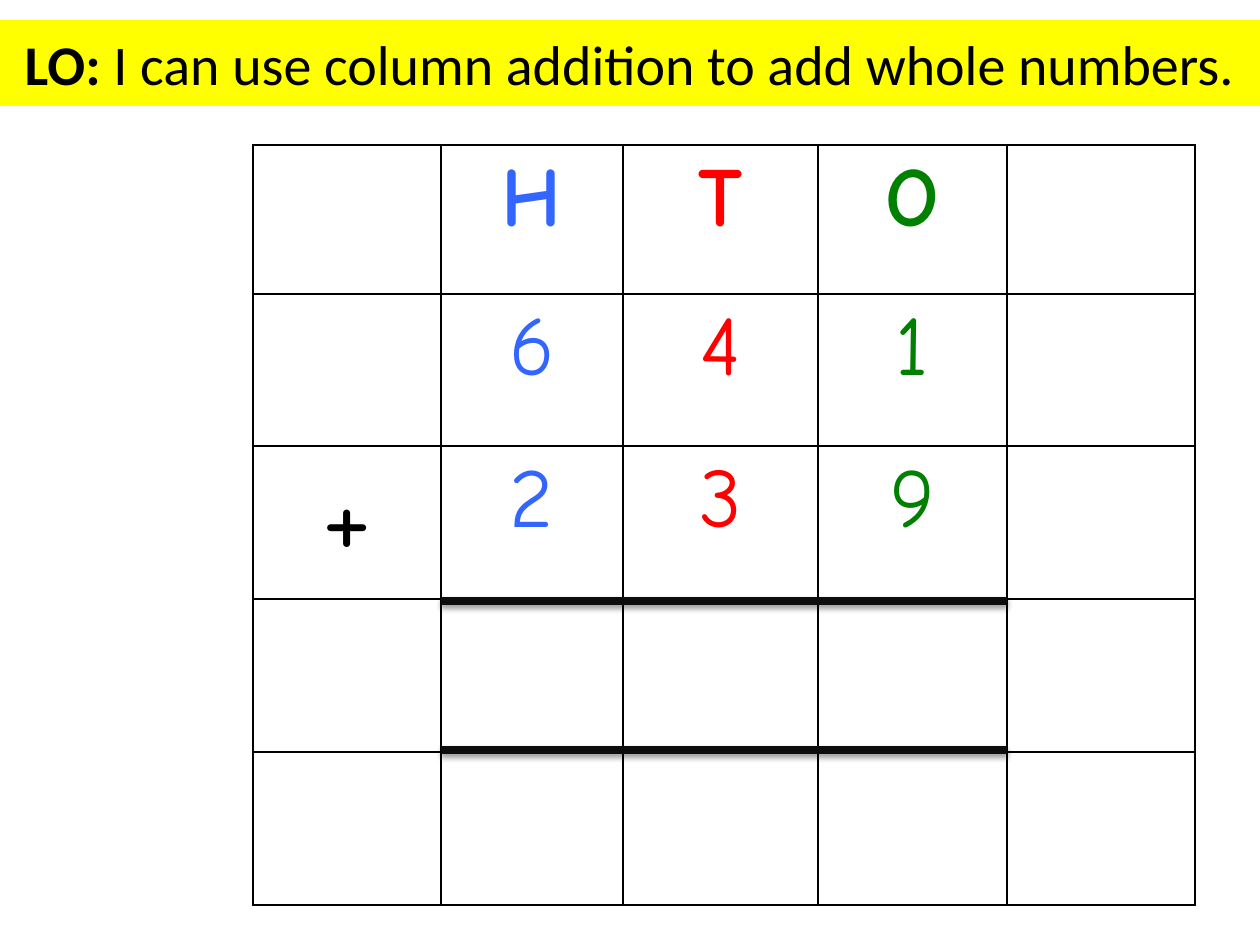
from lxml import etree
from pptx import Presentation
from pptx.dml.color import RGBColor
from pptx.enum.shapes import MSO_CONNECTOR
from pptx.enum.text import MSO_ANCHOR, MSO_AUTO_SIZE, PP_ALIGN
from pptx.oxml import parse_xml
from pptx.util import Emu, Pt

LINE = MSO_CONNECTOR.STRAIGHT
MIDDLE = MSO_ANCHOR.MIDDLE
FIXED = MSO_AUTO_SIZE.NONE
CENTER = PP_ALIGN.CENTER
BLACK = RGBColor(0x00, 0x00, 0x00)
WHITE = RGBColor(0xFF, 0xFF, 0xFF)
YELLOW = RGBColor(0xFF, 0xFF, 0x00)
BLUE = RGBColor(0x33, 0x66, 0xFF)
RED = RGBColor(0xFF, 0x00, 0x00)
GREEN = RGBColor(0x00, 0x80, 0x00)
INK = RGBColor(0x0D, 0x0D, 0x0D)
NS = "http://schemas.openxmlformats.org/drawingml/2006/main"


def px(n):
    return Emu(round(n * 914400 / 126))


def write(para, text, color, **form):
    para.alignment = CENTER
    run = para.add_run()
    run.text = text
    run.font.color.rgb = color
    for key, value in form.items():
        setattr(run.font, key, value)


deck = Presentation()
deck.slide_width, deck.slide_height = px(1260), px(945)
slide = deck.slides.add_slide(deck.slide_layouts[5])

title = slide.shapes.title
title.left, title.top, title.width, title.height = px(0), px(20), px(1260), px(86)
title.fill.solid()
title.fill.fore_color.rgb = YELLOW
frame = title.text_frame
form = {"auto_size": FIXED, "vertical_anchor": MIDDLE, "word_wrap": True,
        "margin_left": 0, "margin_right": 0}
for key, value in form.items():
    setattr(frame, key, value)
for text, bold in (("LO: ", True), ("I can use column addition to add whole numbers.", False)):
    write(frame.paragraphs[0], text, BLACK, name="Calibri", size=Pt(32), bold=bold)

left, top = 253, 145
wide = [188, 182, 195, 189, 188]
high = [149, 152, 153, 153, 153]
rows = [" HTO ", " 641 ", "+239 ", "     ", "     "]
colors = [BLACK, BLUE, RED, GREEN, BLACK]
grid = slide.shapes.add_table(5, 5, px(left), px(top), px(sum(wide)), px(sum(high))).table
for col, size in zip(grid.columns, wide):
    col.width = px(size)
for row, size in zip(grid.rows, high):
    row.height = px(size)

for r, marks in enumerate(rows):
    for c, mark in enumerate(marks):
        cell = grid.cell(r, c)
        if mark.strip():
            write(cell.text_frame.paragraphs[0], mark, colors[c], name="Comic Neue",
                  size=Pt(66 if mark == "+" else 48), bold=r == 0)
        props = cell._tc.get_or_add_tcPr()
        for side in ("lnL", "lnR", "lnT", "lnB"):
            edge = etree.SubElement(props, f"{{{NS}}}{side}", w=str(Pt(1)))
            fill = etree.SubElement(edge, f"{{{NS}}}solidFill")
            etree.SubElement(fill, f"{{{NS}}}srgbClr", val=str(BLACK))
        cell.fill.solid()
        cell.fill.fore_color.rgb = WHITE

start = left + wide[0]
end = start + sum(wide[1:4])
for y in (601, 750):
    rule = slide.shapes.add_connector(LINE, px(start), px(y), px(end), px(y))
    rule.line.color.rgb = INK
    rule.line.width = Pt(4.5)
    rule._element.spPr.append(parse_xml(
        f'<a:effectLst xmlns:a="{NS}"><a:outerShdw blurRad="{Pt(3.1)}" dist="{Pt(1.6)}" '
        f'dir="5400000" rotWithShape="0"><a:srgbClr val="{BLACK}">'
        '<a:alpha val="38000"/></a:srgbClr></a:outerShdw></a:effectLst>'))

deck.save("out.pptx")
